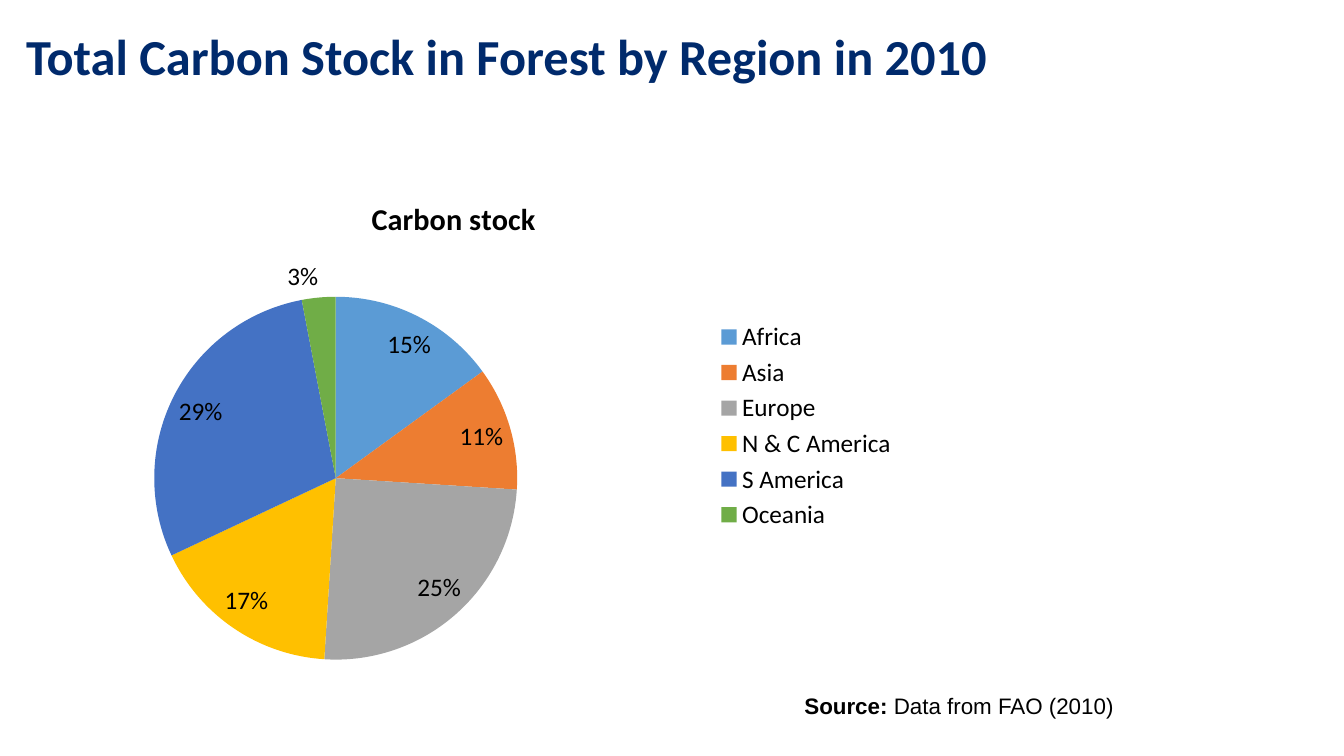
from pptx import Presentation
from pptx.chart.data import CategoryChartData
from pptx.dml.color import RGBColor
from pptx.enum.chart import XL_CHART_TYPE as ChartType
from pptx.enum.chart import XL_LABEL_POSITION as LabelPosition
from pptx.enum.chart import XL_LEGEND_POSITION as LegendPosition
from pptx.enum.text import MSO_ANCHOR, MSO_AUTO_SIZE
from pptx.oxml import parse_xml
from pptx.oxml.ns import nsdecls
from pptx.util import Inches, Pt

COLORS = {
    "title": "002A6C",
    "text": "000000",
    "Africa": "5B9BD5",
    "Asia": "ED7D31",
    "Europe": "A5A5A5",
    "N & C America": "FFC000",
    "S America": "4472C4",
    "Oceania": "70AD47",
}
CARBON_SHARES = {
    "Africa": 15,
    "Asia": 11,
    "Europe": 25,
    "N & C America": 17,
    "S America": 29,
    "Oceania": 3,
}
PIE_AREA = {"x": 0.17, "y": 0.24, "w": 0.4, "h": 0.73}


def color(name):
    return RGBColor.from_string(COLORS[name])


def style_font(font, name, size, color_name, bold=None):
    font.name = name
    font.size = Pt(size)
    font.color.rgb = color(color_name)
    font.bold = bold


def add_title(slide, box):
    frame = slide.shapes.add_textbox(*box).text_frame
    frame.word_wrap = True
    frame.vertical_anchor = MSO_ANCHOR.MIDDLE
    heading = frame.paragraphs[0]
    heading.text = "Total Carbon Stock in Forest by Region in 2010"
    heading.line_spacing = 0.9
    style_font(heading.font, "Calibri", 36, "title", True)


def place_pie(chart):
    sizes = "".join(f'<c:{side} val="{share}"/>' for side, share in PIE_AREA.items())
    layout = parse_xml(
        f'<c:layout {nsdecls("c")}><c:manualLayout><c:layoutTarget val="inner"/>'
        f'<c:xMode val="edge"/><c:yMode val="edge"/>{sizes}'
        "</c:manualLayout></c:layout>"
    )
    plot_area = chart._chartSpace.chart.plotArea
    for automatic in plot_area.xpath("c:layout"):
        plot_area.remove(automatic)
    plot_area.insert(0, layout)


def add_carbon_chart(slide, box):
    carbon = CategoryChartData()
    carbon.categories = list(CARBON_SHARES)
    carbon.add_series("Series 1", list(CARBON_SHARES.values()))
    chart = slide.shapes.add_chart(ChartType.PIE, *box, carbon).chart
    style_font(chart.font, "Calibri", 18, "text")

    chart.has_title = True
    heading = chart.chart_title.text_frame.paragraphs[0]
    heading.text = "Carbon stock"
    style_font(heading.font, "Calibri", 21.6, "text", True)
    chart.chart_title.include_in_layout = False

    chart.has_legend = True
    chart.legend.position = LegendPosition.RIGHT
    chart.legend.include_in_layout = False
    style_font(chart.legend.font, "Calibri", 18, "text")

    pie = chart.plots[0]
    pie.vary_by_categories = True
    for index, region in enumerate(CARBON_SHARES):
        fill = pie.series[0].points[index].format.fill
        fill.solid()
        fill.fore_color.rgb = color(region)

    pie.has_data_labels = True
    labels = pie.data_labels
    labels.show_percentage = True
    labels.show_value = False
    labels.number_format = "0%"
    labels.number_format_is_linked = False
    labels.position = LabelPosition.BEST_FIT
    style_font(labels.font, "Calibri", 18, "text")
    place_pie(chart)


def add_source(slide, box):
    frame = slide.shapes.add_textbox(*box).text_frame
    frame.word_wrap = False
    frame.auto_size = MSO_AUTO_SIZE.SHAPE_TO_FIT_TEXT
    credit = frame.paragraphs[0]
    for words, bold in (("Source: ", True), ("Data from FAO (2010)", False)):
        run = credit.add_run()
        run.text = words
        run.font.bold = bold
    style_font(credit.font, "Arial", 16, "text")


def inches(*lengths):
    return [Inches(length) for length in lengths]


def main():
    deck = Presentation()
    deck.slide_width, deck.slide_height = inches(13.33, 7.5)
    slide = deck.slides.add_slide(deck.slide_layouts[6])
    add_title(slide, inches(0.16, 0, 12.99, 1.18))
    add_carbon_chart(slide, inches(0, 1.75, 9, 4.95))
    add_source(slide, inches(7.88, 6.82, 3.31, 0.37))
    deck.save("out.pptx")


if __name__ == "__main__":
    main()
